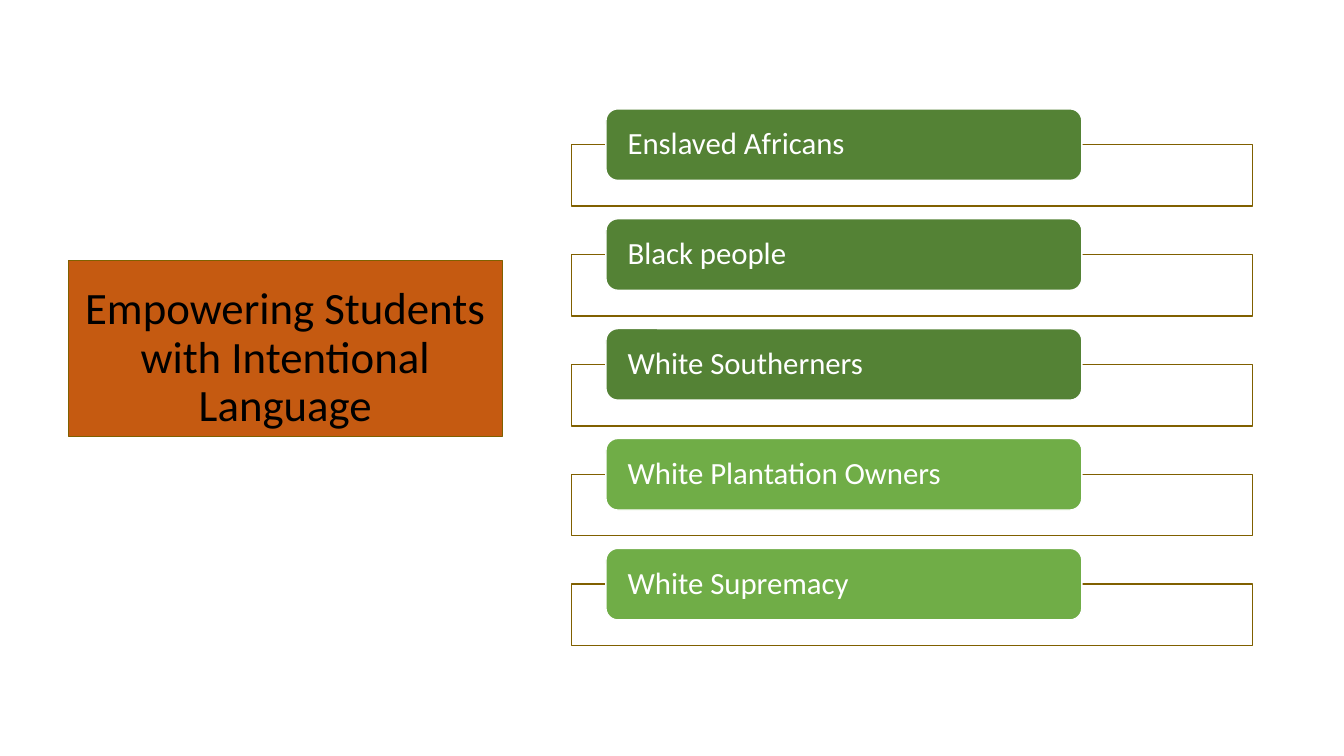
from dataclasses import dataclass

from lxml.etree import SubElement
from pptx import Presentation
from pptx.dml.color import RGBColor
from pptx.enum.shapes import MSO_SHAPE as Preset
from pptx.enum.text import MSO_ANCHOR as Anchor, MSO_AUTO_SIZE as AutoSize, PP_ALIGN as Align
from pptx.oxml.ns import qn
from pptx.util import Inches, Pt


@dataclass(frozen=True)
class Theme:
    font: str = "Calibri"
    title_size: int = 32
    label_size: int = 22
    line_spacing: float = 0.9
    black: str = "000000"
    white: str = "FFFFFF"
    orange: str = "C55A11"
    outline: str = "806000"
    dark_green: str = "548235"
    light_green: str = "70AD47"


THEME = Theme()
SLIDE_SIZE = (13.33, 7.5)
TITLE_BOX = (0.68, 2.58, 4.3, 1.75)
FRAME_LEFT, FRAME_WIDTH, FRAME_HEIGHT = 5.67, 6.75, 0.61
LABEL_LEFT, LABEL_WIDTH, LABEL_HEIGHT = 6.01, 4.72, 0.71
FIRST_ROW_TOP, ROW_PITCH = 1.08, 1.09
TERMS = [
    ("Enslaved Africans", THEME.dark_green),
    ("Black people", THEME.dark_green),
    ("White Southerners", THEME.dark_green),
    ("White Plantation Owners", THEME.light_green),
    ("White Supremacy", THEME.light_green),
]


def paint(shape, fill, line, line_width):
    shape.fill.solid()
    shape.fill.fore_color.rgb = RGBColor.from_string(fill)
    shape.line.color.rgb = RGBColor.from_string(line)
    shape.line.width = Pt(line_width)


def write(shape, text, size, color, align, anchor):
    frame = shape.text_frame
    frame.text = text
    frame.word_wrap = True
    frame.auto_size = AutoSize.NONE
    frame.vertical_anchor = anchor
    paragraph = frame.paragraphs[0]
    paragraph.alignment = align
    paragraph.line_spacing = THEME.line_spacing
    paragraph.space_before = Pt(0)
    font = paragraph.runs[0].font
    font.name = THEME.font
    font.size = Pt(size)
    font.color.rgb = RGBColor.from_string(color)


def add_box(shapes, preset, box, fill, line):
    shape = shapes.add_shape(preset, *map(Inches, box))
    shape.shadow.inherit = False
    paint(shape, fill, line, 1)
    return shape


def add_title(slide, text):
    title = slide.shapes.title
    title.left, title.top, title.width, title.height = map(Inches, TITLE_BOX)
    paint(title, THEME.orange, THEME.outline, 0.75)
    write(title, text, THEME.title_size, THEME.black, Align.CENTER, Anchor.BOTTOM)


def add_frame(shapes, top):
    box = (FRAME_LEFT, top, FRAME_WIDTH, FRAME_HEIGHT)
    frame = add_box(shapes, Preset.RECTANGLE, box, THEME.white, THEME.outline)
    color = frame.fill._xPr.find(qn("a:solidFill"))[0]
    SubElement(color, qn("a:alpha"), val="90000")


def add_label(shapes, top, text, fill):
    box = (LABEL_LEFT, top, LABEL_WIDTH, LABEL_HEIGHT)
    label = add_box(shapes, Preset.ROUNDED_RECTANGLE, box, fill, THEME.white)
    write(label, text, THEME.label_size, THEME.white, Align.LEFT, Anchor.MIDDLE)
    frame = label.text_frame
    frame.margin_left = frame.margin_right = Inches(0.18)
    frame.margin_top = frame.margin_bottom = 0


def add_term_list(slide, terms):
    shapes = slide.shapes.add_group_shape().shapes
    for row, (text, fill) in enumerate(terms):
        top = FIRST_ROW_TOP + row * ROW_PITCH
        add_frame(shapes, top + LABEL_HEIGHT / 2)
        add_label(shapes, top, text, fill)


def main():
    presentation = Presentation()
    presentation.slide_width, presentation.slide_height = map(Inches, SLIDE_SIZE)
    slide = presentation.slides.add_slide(presentation.slide_layouts.get_by_name("Title Only"))
    add_title(slide, "Empowering Students with Intentional Language")
    add_term_list(slide, TERMS)
    presentation.save("out.pptx")


if __name__ == "__main__":
    main()
